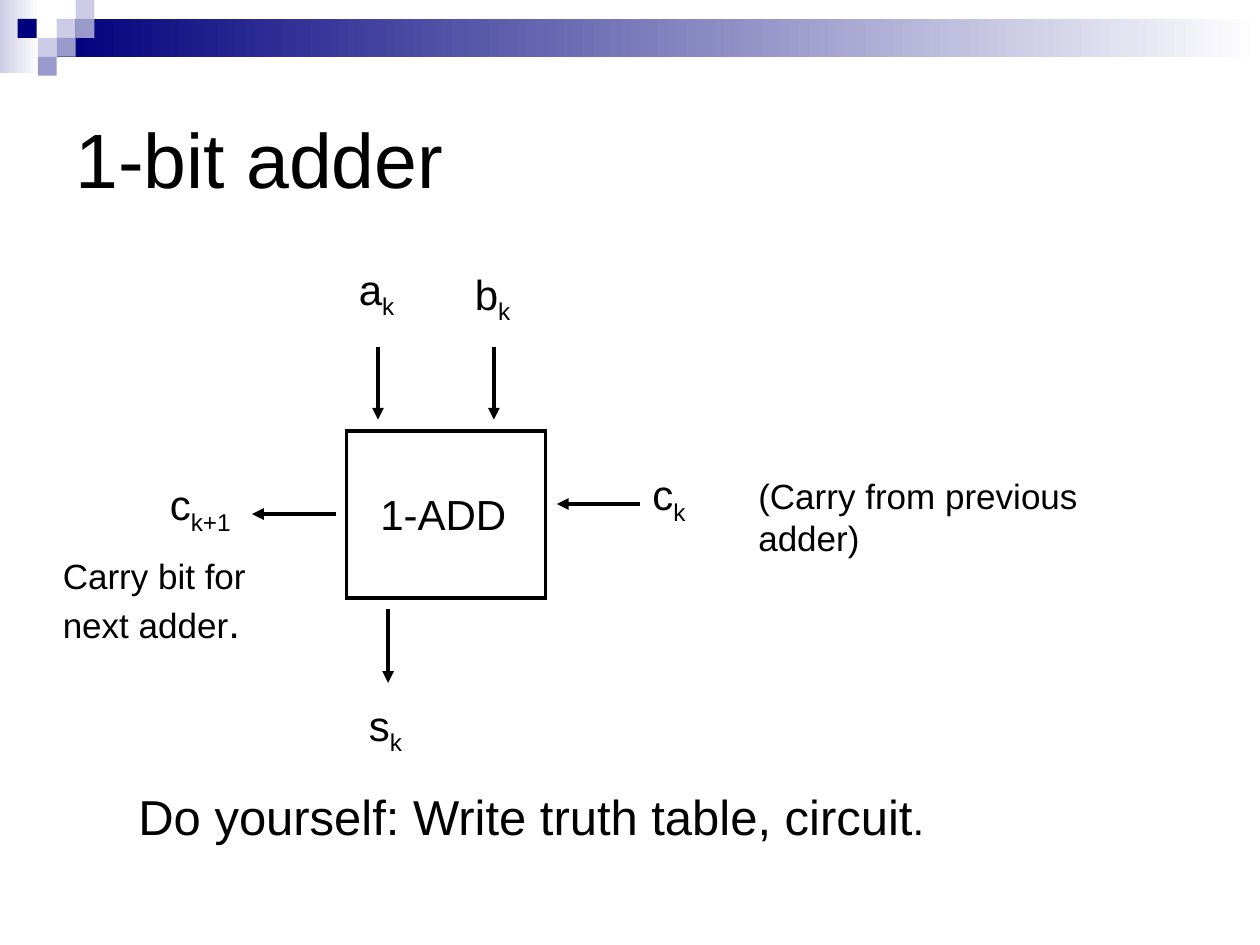
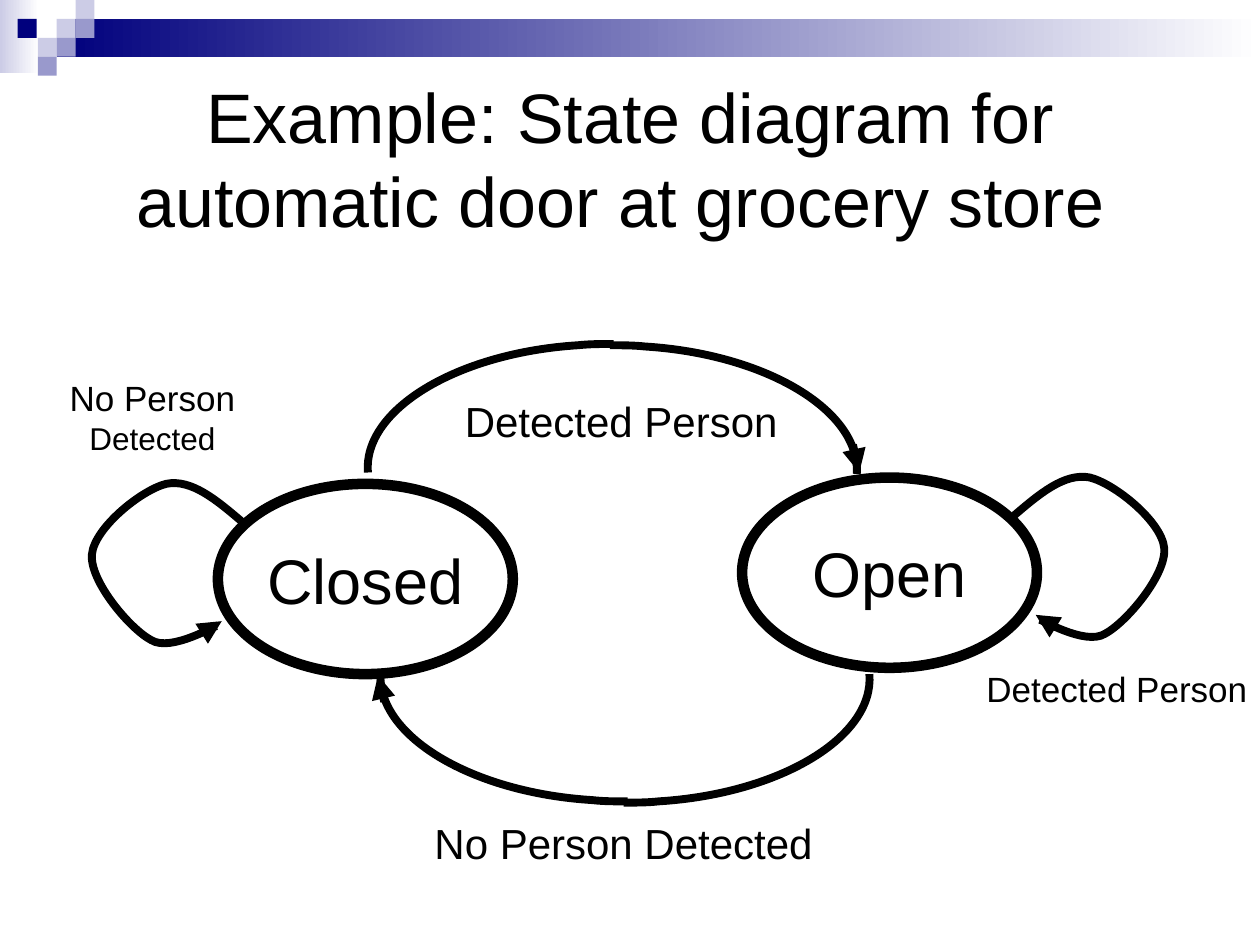
from pptx import Presentation
from pptx import util as u
from pptx.dml.color import RGBColor
from pptx.enum import shapes, text
from pptx.oxml.ns import qn
from lxml import etree

BLACK = RGBColor(0x00, 0x00, 0x00)
WHITE = RGBColor(0xFF, 0xFF, 0xFF)
NAVY = RGBColor(0x00, 0x00, 0x7D)
LILAC = RGBColor(0x99, 0x99, 0xCC)
PALE = RGBColor(0xCC, 0xCC, 0xE6)
FONT = "Arial"
Inches = u.Inches
CENTER = text.PP_ALIGN.CENTER
SQUARE = 0.15

# Shared band: (left, top, colour) of each small square
BAND_SQUARES = [
    (0.45, 0.15, PALE), (0.6, 0, PALE), (0.6, 0.15, LILAC),
    (0.3, 0.3, PALE), (0.14, 0.15, NAVY), (0.45, 0.3, LILAC),
    (0.3, 0.45, LILAC),
]

# State diagram curves: a start point, then the points of cubic segments
ARC_LEFT = [(4.87, 2.73), (4.78, 2.73), (4.68, 2.73), (4.59, 2.74),
            (3.63, 2.8), (2.88, 3.25), (2.92, 3.75)]
ARC_RIGHT = [(4.84, 2.74), (4.94, 2.74), (5.03, 2.74), (5.12, 2.75),
             (6.08, 2.81), (6.83, 3.26), (6.8, 3.76)]
LOOP = [(8.05, 4.09), (8.25, 3.92), (8.45, 3.75), (8.65, 3.79),
        (8.85, 3.84), (9.22, 4.14), (9.24, 4.35),
        (9.26, 4.56), (8.94, 4.94), (8.77, 5.03),
        (8.61, 5.13), (8.24, 4.9), (8.25, 4.92)]


def add_runs(paragraph, runs):
    """Each run is (wording, size) or (wording, size, baseline in percent)."""
    for wording, size, *baseline in runs:
        for index, line in enumerate(wording.split("\n")):
            if index:
                paragraph.add_line_break()
            run = paragraph.add_run()
            run.text = line
            run.font.name = FONT
            run.font.size = u.Pt(size)
            run.font.color.rgb = BLACK
            if baseline:
                run.font._element.set("baseline", str(baseline[0] * 1000))


def add_text(slide, left, top, width, height, runs, wrap=False, align=None):
    box = slide.shapes.add_textbox(*map(Inches, (left, top, width, height)))
    frame = box.text_frame
    frame.word_wrap = wrap
    frame.auto_size = text.MSO_AUTO_SIZE.SHAPE_TO_FIT_TEXT
    paragraph = frame.paragraphs[0]
    paragraph.alignment = align
    add_runs(paragraph, runs)
    return box


def add_title(slide, wording, size, align=None):
    box = add_text(slide, 0.5, 0.5, 9, 1.5, [(wording, size)], True, align)
    box.text_frame.auto_size = text.MSO_AUTO_SIZE.NONE
    box.text_frame.vertical_anchor = text.MSO_ANCHOR.MIDDLE


def add_signal(slide, left, top, width, name, index):
    add_text(slide, left, top, width, 0.5, [(name, 24), (index, 24, -25)])


def add_filled(slide, left, top, width, height, colour, fade=False):
    shape = slide.shapes.add_shape(
        shapes.MSO_SHAPE.RECTANGLE, *map(Inches, (left, top, width, height)))
    shape.shadow.inherit = False
    shape.line.fill.background()
    if fade:
        shape.fill.gradient()
        shape.fill.gradient_angle = 0
        for stop, stop_colour in zip(shape.fill.gradient_stops, (colour, WHITE)):
            stop.color.rgb = stop_colour
    else:
        shape.fill.solid()
        shape.fill.fore_color.rgb = colour


def outline(shape, weight):
    shape.shadow.inherit = False
    shape.fill.background()
    shape.line.color.rgb = BLACK
    shape.line.width = u.Pt(weight)
    line = shape._element.spPr.find(qn("a:ln"))
    etree.SubElement(line, qn("a:miter"), lim="800000")


def add_outlined(slide, kind, left, top, width, height, weight):
    shape = slide.shapes.add_shape(
        kind, *map(Inches, (left, top, width, height)))
    outline(shape, weight)
    return shape


def add_arrow(slide, start, end, weight, tip="a:tailEnd"):
    arrow = slide.shapes.add_connector(
        shapes.MSO_CONNECTOR.STRAIGHT, *map(Inches, start + end))
    arrow.line.color.rgb = BLACK
    arrow.line.width = u.Pt(weight)
    properties = arrow._element.spPr
    etree.SubElement(properties.find(qn("a:ln")), qn(tip), type="triangle")
    etree.SubElement(properties, qn("a:effectLst"))


def add_curve(slide, points):
    """Draw an open line, each three points after the start one cubic segment."""
    track = [tuple(map(Inches, point)) for point in points]
    builder = slide.shapes.build_freeform(*track[0])
    builder.add_line_segments(track[1:], close=False)
    curve = builder.convert_to_shape()
    outline(curve, 4.5)
    steps = list(curve._element.iter(qn("a:lnTo")))
    outline_track = steps[0].getparent()
    for first in range(0, len(steps), 3):
        segment = etree.SubElement(outline_track, qn("a:cubicBezTo"))
        for step in steps[first:first + 3]:
            segment.append(step[0])
            outline_track.remove(step)


def add_state(slide, left, top, name):
    state = add_outlined(slide, shapes.MSO_SHAPE.OVAL, left, top, 2.34, 1.51, 6)
    frame = state.text_frame
    frame.word_wrap = False
    frame.vertical_anchor = text.MSO_ANCHOR.MIDDLE
    frame.paragraphs[0].alignment = CENTER
    add_runs(frame.paragraphs[0], [(name, 36)])


def new_slide(presentation):
    slide = presentation.slides.add_slide(presentation.slide_layouts[6])
    add_filled(slide, 0, 0, 0.31, 0.58, PALE, fade=True)
    add_filled(slide, 0.45, 0.15, 9.55, 0.3, NAVY, fade=True)
    for left, top, colour in BAND_SQUARES:
        add_filled(slide, left, top, SQUARE, SQUARE, colour)
    return slide


def build_adder(presentation):
    slide = new_slide(presentation)
    add_title(slide, "1-bit adder", 44)

    # Remarks on the carry in and the exercise
    add_text(slide, 5.92, 3.72, 3.6, 0.43,
             [("(Carry from previous adder)", 20)], wrap=True)
    add_text(slide, 1, 6.19, 6.45, 0.57,
             [("Do yourself: Write truth table, circuit", 28), (".", 24)])

    # Adder block
    add_outlined(slide, shapes.MSO_SHAPE.RECTANGLE, 2.75, 3.42, 1.58, 1.33, 2.25)
    add_text(slide, 2.92, 3.83, 1.2, 0.5, [("1-ADD", 24)])

    # Vertical arrows point down, the carry arrows point left
    for x, top, bottom in [(3, 2.75, 3.33), (3.92, 2.75, 3.33),
                           (3.08, 4.83, 5.42)]:
        add_arrow(slide, (x, top), (x, bottom), 2.25)
    for left, right, y in [(4.42, 5.08, 4), (2, 2.67, 4.08)]:
        add_arrow(slide, (left, y), (right, y), 2.25, "a:headEnd")

    # Signals
    add_signal(slide, 2.75, 2.04, 0.5, "a", "k")
    add_signal(slide, 3.67, 2.08, 0.5, "b", "k")
    add_signal(slide, 5.08, 3.67, 0.48, "c", "k")
    add_signal(slide, 1.25, 3.75, 0.73, "c", "k+1")
    add_signal(slide, 2.83, 5.5, 0.48, "s", "k")
    add_text(slide, 0.4, 4.35, 1.73, 0.83,
             [("Carry bit for \nnext adder", 20), (".", 24)])


def build_door(presentation):
    slide = new_slide(presentation)
    add_title(slide, "Example: State diagram for automatic door at grocery store ",
              40, CENTER)

    # States
    add_state(slide, 1.73, 3.84, "Closed")
    add_state(slide, 5.89, 3.79, "Open")

    # Transitions: the lower arcs are the upper ones turned half round
    for arc in (ARC_LEFT, ARC_RIGHT):
        add_curve(slide, arc)
        add_curve(slide, [(9.82 - x, 9.1 - y) for x, y in arc])
    add_arrow(slide, (6.77, 3.53), (6.82, 3.75), 4.5)
    add_arrow(slide, (3.05, 5.57), (3, 5.36), 4.5)

    # Self-loops: the left one mirrors the right one
    add_curve(slide, LOOP)
    add_curve(slide, [(9.97 - x, y + 0.05) for x, y in LOOP])
    add_arrow(slide, (8.3, 4.93), (8.22, 4.88), 4.5)
    add_arrow(slide, (1.68, 4.98), (1.76, 4.93), 4.5)

    # Transition labels
    add_text(slide, 3.59, 3.09, 2.68, 0.5, [("Detected Person", 24)])
    add_text(slide, 0.34, 2.94, 1.74, 0.73,
             [("No Person ", 20), ("Detected", 18)], wrap=True, align=CENTER)
    add_text(slide, 7.73, 5.25, 2.27, 0.43, [("Detected Person", 20)])
    add_text(slide, 3.35, 6.44, 3.2, 0.5, [("No Person Detected", 24)])


def main():
    presentation = Presentation()
    presentation.slide_width = Inches(10)
    presentation.slide_height = Inches(7.5)
    build_adder(presentation)
    build_door(presentation)
    presentation.save("out.pptx")


main()
